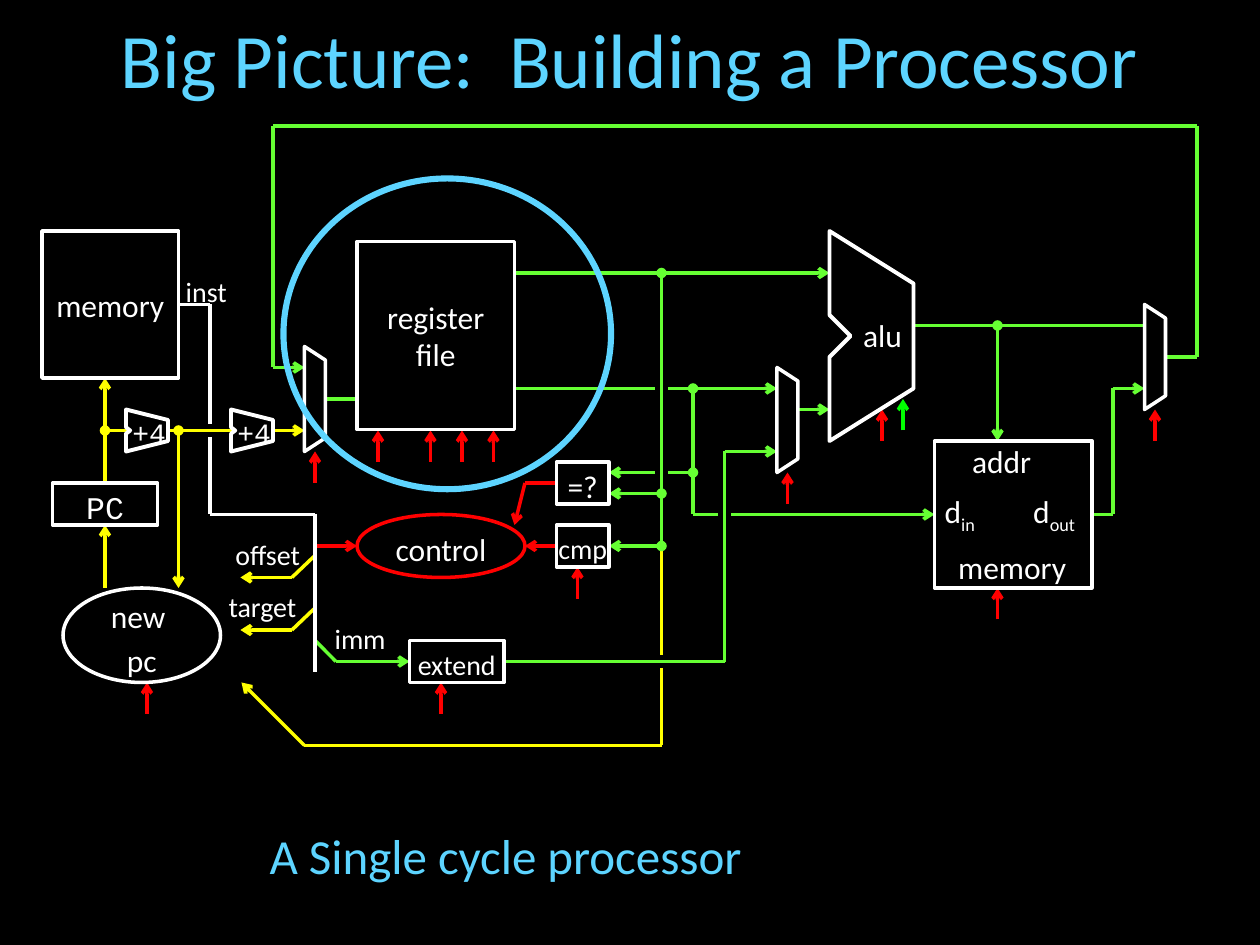
from itertools import pairwise

from lxml import etree
from pptx import Presentation
from pptx import util as u
from pptx.dml.color import RGBColor
from pptx.enum import shapes, text
from pptx.oxml.ns import qn

PX = 7620  # 120 px to the inch
HUES = {"black": "000000", "white": "FFFFFF", "red": "FF0000", "green": "66FF33",
        "lime": "00FF00", "yellow": "FFFF00", "sky": "5DD4FF"}
RGB = {name: RGBColor.from_string(hue) for name, hue in HUES.items()}
RECT, OVAL = shapes.MSO_SHAPE.RECTANGLE, shapes.MSO_SHAPE.OVAL

deck = Presentation()
deck.slide_width, deck.slide_height = 1200 * PX, 900 * PX
slide = deck.slides.add_slide(deck.slide_layouts[5])
slide.background.fill.solid()
slide.background.fill.fore_color.rgb = RGB["black"]
parts = slide.shapes


def write(shape, words, size=18, face="Calibri", hue="white", gap=1.16, wrap=False):
    """Centre words in a shape; what follows an underscore is a subscript."""
    frame = shape.text_frame
    form = {"margin_left": 0, "margin_right": 0, "word_wrap": wrap,
            "auto_size": text.MSO_AUTO_SIZE.NONE,
            "vertical_anchor": text.MSO_ANCHOR.MIDDLE}
    for key, value in form.items():
        setattr(frame, key, value)
    para = frame.paragraphs[0]
    para.alignment, para.line_spacing = text.PP_ALIGN.CENTER, gap
    for i, piece in enumerate(words.split("_")):
        if i:
            para.add_run().text = piece
        else:
            para.text = piece
    for i, run in enumerate(para.runs):
        run.font.size, run.font.name = u.Pt(size), face
        run.font.color.rgb = RGB[hue]
        if "_" in words and i:
            run.font._element.set("baseline", "-25000")


def wire(hue, points, head=None, tail=None, width=2):
    """Join points with straight lines; head and tail mark the two ends."""
    legs = list(pairwise(points))
    for i, (start, end) in enumerate(legs):
        line = parts.add_connector(shapes.MSO_CONNECTOR.STRAIGHT,
                                   *(n * PX for n in start + end))
        line.line.color.rgb, line.line.width = RGB[hue], u.Pt(width)
        props = line._element.spPr
        etree.SubElement(props, qn("a:effectLst"))
        ends = {"a:headEnd": head if i == 0 else None,
                "a:tailEnd": tail if i == len(legs) - 1 else None}
        for tag, kind in ends.items():
            if kind:
                etree.SubElement(props.find(qn("a:ln")), qn(tag), type=kind)


title = parts.title
title.left, title.top, title.width, title.height = (n * PX for n in (30, 20, 1140, 70))
write(title, "Big Picture:  Building a Processor", 44, hue="sky", gap=1, wrap=True)

# Wires that others cross
lower = [
    ("green", [(490, 260), (790, 260)], None, "arrow"),
    ("green", [(490, 370), (740, 370)], None, "arrow"),
    ("green", [(660, 370), (660, 490), (890, 490)], "oval", "arrow"),
    ("green", [(660, 450), (580, 450)], "oval", "arrow"),
    ("green", [(630, 470), (580, 470)], "oval", "arrow"),
    ("green", [(630, 520), (580, 520)], None, "arrow"),
    ("green", [(870, 310), (1090, 310)], None, None),
    ("green", [(950, 310), (950, 420)], "oval", "arrow"),
    ("green", [(1040, 490), (1060, 490), (1060, 370), (1090, 370)], None, "arrow"),
    ("green", [(1110, 340), (1140, 340), (1140, 120), (260, 120), (260, 350),
               (290, 350)], None, "arrow"),
    ("green", [(310, 380), (340, 380)], None, None),
    ("green", [(760, 390), (790, 390)], None, "arrow"),
    ("green", [(300, 610), (320, 630), (390, 630)], None, "arrow"),
    ("yellow", [(100, 460), (100, 360)], None, "arrow"),
    ("yellow", [(100, 560), (100, 500)], None, "arrow"),
    ("yellow", [(170, 410), (170, 560)], "oval", "arrow"),
    ("yellow", [(299, 530), (278, 550), (229, 550)], None, "arrow"),
    ("yellow", [(299, 580), (278, 600), (229, 600)], None, "arrow"),
    ("yellow", [(630, 520), (630, 710), (290, 710), (230, 650)], None, "arrow"),
    ("red", [(300, 520), (340, 520)], None, "arrow"),
    ("red", [(530, 520), (500, 520)], None, "arrow"),
    ("red", [(530, 460), (500, 460), (490, 500)], None, "arrow"),
    ("white", [(170, 290), (200, 290), (200, 490), (300, 490), (300, 640)], None, None),
]
for item in lower:
    wire(*item)

# Breaks where wires cross
for start, end in [((190, 410), (220, 410)), ((620, 630), (650, 630)),
                   ((630, 360), (630, 380)), ((630, 440), (630, 460)),
                   ((690, 480), (690, 500))]:
    wire("black", [start, end], width=7)

wire("yellow", [(100, 410), (290, 410)], "oval", "arrow")
wire("green", [(480, 630), (690, 630), (690, 430), (740, 430)], None, "arrow")
wire("green", [(630, 520), (630, 260)], "oval", "oval")

# Control signals, by arrow tip
tips = [(950, 560), (1100, 390), (840, 390), (750, 450), (420, 650), (140, 650),
        (300, 430), (360, 410), (410, 410), (440, 410), (470, 410), (550, 540)]
for x, y in tips:
    wire("red", [(x, y + 30), (x, y)], None, "arrow")
wire("lime", [(860, 410), (860, 380)], None, "arrow")

# Multiplexers, adders and the ALU
mux = [(0, 0), (20, 13), (20, 87), (0, 100)]
adder = [(0, 0), (40, 10), (40, 30), (0, 40), (0, 23), (4, 20), (0, 17)]
alu = [(0, 0), (80, 50), (80, 150), (0, 200), (0, 120), (20, 100), (0, 80)]
for form, x, y, width in [(mux, 1090, 290, 2), (mux, 740, 350, 2), (mux, 290, 330, 2),
                          (adder, 120, 390, 2.25), (adder, 220, 390, 2.25),
                          (alu, 790, 220, 2.25)]:
    pen = parts.build_freeform(0, 0, PX)
    pen.add_line_segments(form[1:], close=True)
    block = pen.convert_to_shape(x * PX, y * PX)
    block.shadow.inherit = False
    block.line.color.rgb, block.line.width = RGB["white"], u.Pt(width)
    if form is adder:
        block.fill.solid()
        block.fill.fore_color.rgb = RGB["black"]
    else:
        block.fill.background()

# Boxes and ovals
plain = {"gap": 1}
small = {"size": 16}
code = {"face": "Courier New"}
units = [
    (RECT, (40, 220, 130, 140), "white", 2, "memory", plain),
    (RECT, (50, 460, 100, 40), "white", 2, "PC", code),
    (OVAL, (60, 560, 150, 90), "white", 2, "new \npc", {}),
    (RECT, (340, 230, 150, 179), "white", 2, "register\nfile", plain),
    (RECT, (530, 440, 50, 40), "white", 2, "=?", {}),
    (RECT, (530, 500, 50, 40), "white", 2, "cmp", small),
    (OVAL, (340, 490, 160, 60), "red", 2, "control", {}),
    (RECT, (390, 610, 90, 40), "white", 2, "extend", small),
    (RECT, (890, 420, 150, 140), "white", 2, "", {}),
    (OVAL, (270, 170, 312, 296), "sky", 3.5, "", {}),
]
for kind, place, hue, width, words, form in units:
    unit = parts.add_shape(kind, *(n * PX for n in place))
    unit.shadow.inherit = False
    unit.fill.background()
    unit.line.color.rgb, unit.line.width = RGB[hue], u.Pt(width)
    if words:
        write(unit, words, **form)

# Free labels
labels = [
    ("inst", (170, 260, 53, 30), small),
    ("offset", (220, 510, 70, 30), small),
    ("target", (220, 560, 60, 30), small),
    ("imm", (307, 590, 72, 30), small),
    ("+4", (132, 394, 20, 30), small | code),
    ("+4", (232, 394, 20, 30), small | code),
    ("alu", (810, 290, 61, 52), {}),
    ("addr", (890, 410, 128, 52), {}),
    ("d_in", (880, 460, 68, 52), {}),
    ("d_out", (970, 460, 68, 52), {}),
    ("memory", (900, 510, 128, 54), {}),
    ("A Single cycle processor", (242, 780, 479, 68),
     {"size": 28, "hue": "sky", "gap": 1}),
]
for words, place, form in labels:
    write(parts.add_textbox(*(n * PX for n in place)), words, **form)

deck.save("out.pptx")
